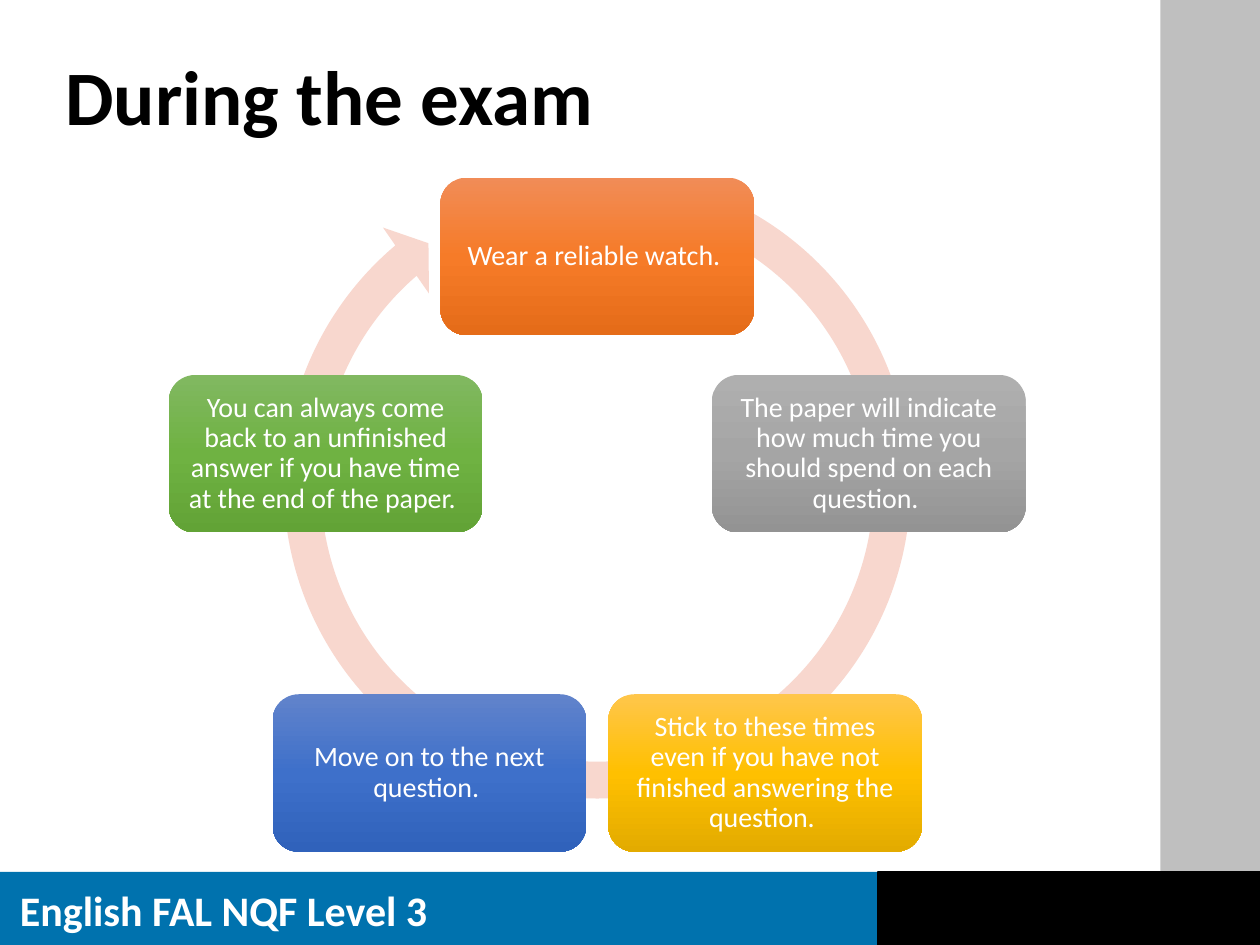
from copy import deepcopy
from math import cos, radians, sin

from pptx import Presentation
from pptx.dml.color import RGBColor
from pptx.enum import shapes, text
from pptx.oxml.ns import qn
from pptx.util import Inches, Pt

WHITE = RGBColor(0xFF, 0xFF, 0xFF)
BLACK = RGBColor(0, 0, 0)
GREY = RGBColor(0xBF, 0xBF, 0xBF)
BLUE = RGBColor(0x00, 0x72, 0xAE)
RING = RGBColor(0xF8, 0xD7, 0xCE)

FONT = "Calibri"
CARD_W, CARD_H = 2.49, 1.25
RING_SIZE = 5.32
RING_RISE = 0.22  # how far the arrow's frame starts above the first card
RING_ADJUSTMENTS = (0.055, 3.31, 137.75, 173.87, 0.06)

# Clockwise from the top: wording and the gradient from top to bottom
STEPS = [
    ("Wear a reliable watch. ", ("F18C57", "F67B28", "E56C19")),
    ("The paper will indicate how much time you should spend on each question. ",
     ("AFAFAF", "A5A5A5", "939393")),
    ("Stick to these times even if you have not finished answering the question. ",
     ("FFC64B", "FFC000", "E3AB00")),
    ("Move on to the next question. ", ("6183CB", "3E70CA", "3062BB")),
    ("You can always come back to an unfinished answer if you have time "
     "at the end of the paper. ", ("81B861", "6FB242", "62A336")),
]


def add_shape(s, kind, left, top, width, height, color=None):
    sp = s.shapes.add_shape(kind, Inches(left), Inches(top), Inches(width), Inches(height))
    sp.shadow.inherit = False
    sp.line.fill.background()
    if color is not None:
        sp.fill.solid()
        sp.fill.fore_color.rgb = color
    return sp


def write(tf, words, size, color, bold=False, align=text.PP_ALIGN.LEFT, spacing=None):
    tf.word_wrap = True
    p = tf.paragraphs[0]
    p.alignment = align
    p.line_spacing = spacing
    r = p.add_run()
    r.text = words
    r.font.name = FONT
    r.font.size = Pt(size)
    r.font.bold = bold
    r.font.color.rgb = color


def add_text(s, left, top, width, height, words, size, color, spacing=None):
    tf = s.shapes.add_textbox(Inches(left), Inches(top), Inches(width), Inches(height)).text_frame
    tf.vertical_anchor = text.MSO_ANCHOR.MIDDLE
    write(tf, words, size, color, bold=True, spacing=spacing)


def fill_gradient(sp, colors):
    """Fill from top to bottom with three evenly spaced colours."""
    fill = sp.fill
    fill.gradient()
    fill.gradient_angle = 270
    gs_list = sp._element.spPr.find(qn("a:gradFill")).find(qn("a:gsLst"))
    gs_list.insert(1, deepcopy(gs_list[0]))
    for stop, position, color in zip(fill.gradient_stops, (0, 0.5, 1), colors):
        stop.position = position
        stop.color.rgb = RGBColor.from_string(color)


def add_card(s, left, top, words, colors):
    sp = add_shape(s, shapes.MSO_SHAPE.ROUNDED_RECTANGLE, left, top, CARD_W, CARD_H)
    fill_gradient(sp, colors)
    tf = sp.text_frame
    tf.margin_left = tf.margin_right = tf.margin_top = tf.margin_bottom = Inches(0.07)
    tf.vertical_anchor = text.MSO_ANCHOR.MIDDLE
    write(tf, words, 16, WHITE, align=text.PP_ALIGN.CENTER, spacing=0.9)


def add_cycle(s, left, top, width, height):
    """Spread the step cards round a circle, over a circular arrow."""
    step = radians(360 / len(STEPS))
    radius = (height - CARD_H) / (1 + cos(step / 2))
    cx, cy = left + width / 2, top + CARD_H / 2 + radius

    ring = add_shape(s, shapes.MSO_SHAPE.CIRCULAR_ARROW, cx - RING_SIZE / 2,
                     top - RING_RISE, RING_SIZE, RING_SIZE, RING)
    for i, value in enumerate(RING_ADJUSTMENTS):
        ring.adjustments[i] = value

    for i, (words, colors) in enumerate(STEPS):
        x, y = cx + radius * sin(i * step), cy - radius * cos(i * step)
        add_card(s, x - CARD_W / 2, y - CARD_H / 2, words, colors)


def add_side_band(s, left, top, width, height):
    add_shape(s, shapes.MSO_SHAPE.RECTANGLE, left, top, width, height, GREY)


def add_footer(s, left, top, width, height):
    rect = shapes.MSO_SHAPE.RECTANGLE
    split = 6.97
    add_shape(s, rect, left, top, width, height, BLUE)
    end = add_shape(s, rect, left + split, top, width - split, height, BLACK)
    end.line.color.rgb = BLACK
    end.line.width = Pt(1)
    add_text(s, left + 0.06, top + 0.05, 3.75, 0.5, "English FAL NQF Level 3", 24, WHITE)


def main():
    prs = Presentation()
    prs.slide_width, prs.slide_height = Inches(10), Inches(7.5)
    s = prs.slides.add_slide(prs.slide_layouts[6])
    add_side_band(s, 9.21, 0, 0.79, 7.49)
    add_footer(s, 0, 6.92, 10, 0.58)
    add_text(s, 0.42, 0.4, 8.65, 0.79, "During the exam", 44, BLACK, spacing=0.9)
    add_cycle(s, 1.34, 1.41, 6.8, 5.35)
    prs.save("out.pptx")


if __name__ == "__main__":
    main()
